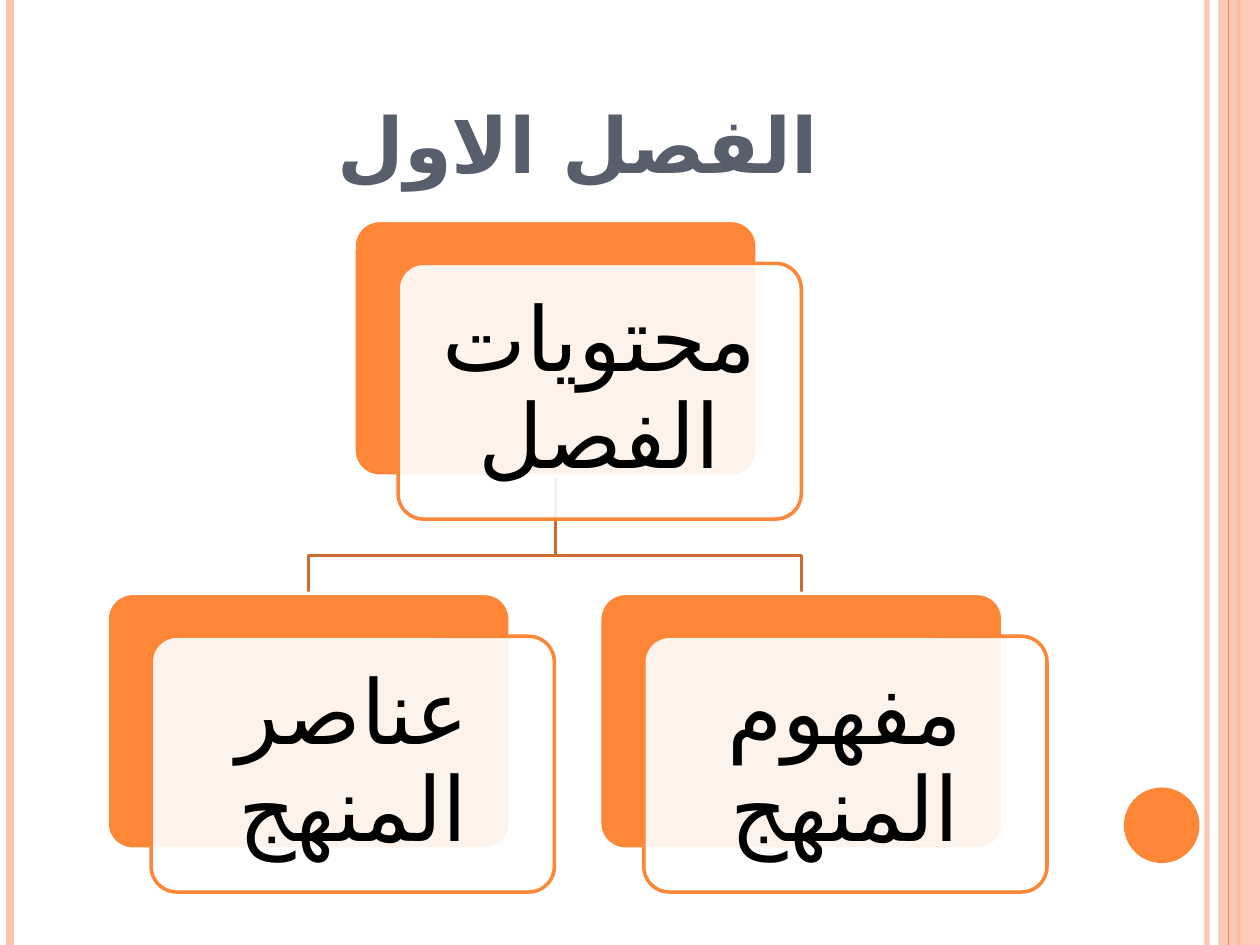
from dataclasses import dataclass

from lxml.etree import SubElement
from pptx import Presentation
from pptx.dml.color import RGBColor
from pptx.enum.shapes import MSO_CONNECTOR, MSO_SHAPE
from pptx.enum.text import MSO_ANCHOR, MSO_AUTO_SIZE, PP_ALIGN
from pptx.oxml.ns import qn
from pptx.util import Inches, Pt


@dataclass(frozen=True)
class Theme:
    font: str = "Cambria"
    arabic_font: str = "DejaVu Sans"
    accent: str = "FE8637"
    pale: str = "FEC3AE"
    branch: str = "CB6B2C"
    white: str = "FFFFFF"
    title: str = "575F6D"
    body: str = "000000"
    title_size: float = 44
    body_size: float = 51
    outline: float = 2


@dataclass(frozen=True)
class Rule:
    x: float
    color: str
    width: float
    opacity: int = 100


@dataclass(frozen=True)
class Node:
    x: float
    y: float
    text: str

    @property
    def center(self) -> float:
        return self.x + CARD_W / 2


THEME = Theme()
SLIDE_W, SLIDE_H = 10, 7.5
CARD_W, CARD_H = 3.2, 2.03
CARD_DX, CARD_DY = 0.35, 0.34
CARD_INSET = 0.21
BRANCH_DROP = 0.63

RULES = [
    Rule(9.58, THEME.pale, 3, 93),
    Rule(0.08, THEME.pale, 4.5),
    Rule(9.83, THEME.accent, 1.5),
]
BAND_RULE = Rule(9.75, THEME.accent, 0.75)

ROOT = Node(2.81, 1.75, "محتويات الفصل")
CHILDREN = [
    Node(0.85, 4.71, "عناصر المنهج"),
    Node(4.76, 4.71, "مفهوم المنهج"),
]


def set_opacity(fill, color: str, percent: int) -> None:
    """Fill with a solid colour, see-through when percent is below 100."""
    fill.solid()
    fill.fore_color.rgb = RGBColor.from_string(color)
    if percent < 100:
        clr = fill._xPr.find(qn("a:solidFill"))[0]
        SubElement(clr, qn("a:alpha"), val=str(percent * 1000))


def style_line(line, color: str, width: float, opacity: int = 100) -> None:
    line.width = Pt(width)
    set_opacity(line.fill, color, opacity)


def add_rule(slide, rule: Rule) -> None:
    x = Inches(rule.x)
    cxn = slide.shapes.add_connector(MSO_CONNECTOR.STRAIGHT, x, 0, x, Inches(SLIDE_H))
    style_line(cxn.line, rule.color, rule.width, rule.opacity)
    SubElement(cxn._element.spPr, qn("a:effectLst"))


def add_box(slide, kind, x: float, y: float, w: float, h: float,
            color: str, opacity: int = 100, outline: str | None = None):
    sp = slide.shapes.add_shape(kind, Inches(x), Inches(y), Inches(w), Inches(h))
    sp.shadow.inherit = False
    set_opacity(sp.fill, color, opacity)
    if outline:
        style_line(sp.line, outline, THEME.outline)
    else:
        sp.line.fill.background()
    return sp


def set_rtl_text(sp, text: str, size: float, color: str, bold: bool = False):
    """Set one centred right-to-left paragraph and return it."""
    tf = sp.text_frame
    tf.text = text
    tf.word_wrap = True
    tf.auto_size = MSO_AUTO_SIZE.NONE
    p = tf.paragraphs[0]
    p.alignment = PP_ALIGN.CENTER
    p._p.get_or_add_pPr().set("rtl", "1")
    font = p.runs[0].font
    font.name, font.size, font.bold = THEME.font, Pt(size), bold
    font.color.rgb = RGBColor.from_string(color)
    SubElement(font._rPr, qn("a:cs"), typeface=THEME.arabic_font)
    return p


def add_title(slide, text: str) -> None:
    sp = slide.shapes.title
    sp.left, sp.top, sp.width, sp.height = map(Inches, (0.5, 0.3, 8.17, 1.25))
    p = set_rtl_text(sp, text, THEME.title_size, THEME.title, bold=True)
    p.runs[0].font._rPr.set("cap", "small")
    sp.text_frame.vertical_anchor = MSO_ANCHOR.BOTTOM


def add_branch(slide, parent: Node, child: Node) -> None:
    top = parent.y + CARD_H
    bend = top + BRANCH_DROP
    points = [(parent.center, bend), (child.center, bend), (child.center, child.y)]
    builder = slide.shapes.build_freeform(Inches(parent.center), Inches(top))
    builder.add_line_segments([(Inches(x), Inches(y)) for x, y in points], close=False)
    sp = builder.convert_to_shape()
    sp.shadow.inherit = False
    sp.fill.background()
    style_line(sp.line, THEME.branch, THEME.outline)


def add_node(slide, node: Node) -> None:
    """Draw a solid back card and a translucent front card with the text."""
    kind = MSO_SHAPE.ROUNDED_RECTANGLE
    back = add_box(slide, kind, node.x, node.y, CARD_W, CARD_H,
                   THEME.accent, outline=THEME.white)
    front = add_box(slide, kind, node.x + CARD_DX, node.y + CARD_DY, CARD_W, CARD_H,
                    THEME.white, 90, THEME.accent)
    for card in (back, front):
        card.adjustments[0] = 0.1
    p = set_rtl_text(front, node.text, THEME.body_size, THEME.body)
    p.line_spacing = 0.9
    tf = front.text_frame
    tf.vertical_anchor = MSO_ANCHOR.MIDDLE
    tf.margin_left = tf.margin_right = Inches(CARD_INSET)
    tf.margin_top = tf.margin_bottom = Inches(CARD_INSET)


def add_frame(slide) -> None:
    for rule in RULES:
        add_rule(slide, rule)
    add_box(slide, MSO_SHAPE.RECTANGLE, 9.67, 0, SLIDE_W - 9.67, SLIDE_H, THEME.pale, 87)
    add_rule(slide, BAND_RULE)
    add_box(slide, MSO_SHAPE.OVAL, 8.92, 6.25, 0.6, 0.6, THEME.accent)


def main() -> None:
    prs = Presentation()
    prs.slide_width, prs.slide_height = Inches(SLIDE_W), Inches(SLIDE_H)
    slide = prs.slides.add_slide(prs.slide_layouts[5])
    add_frame(slide)
    add_title(slide, "الفصل الاول")
    for child in reversed(CHILDREN):
        add_branch(slide, ROOT, child)
    for node in (ROOT, *CHILDREN):
        add_node(slide, node)
    prs.save("out.pptx")


if __name__ == "__main__":
    main()
